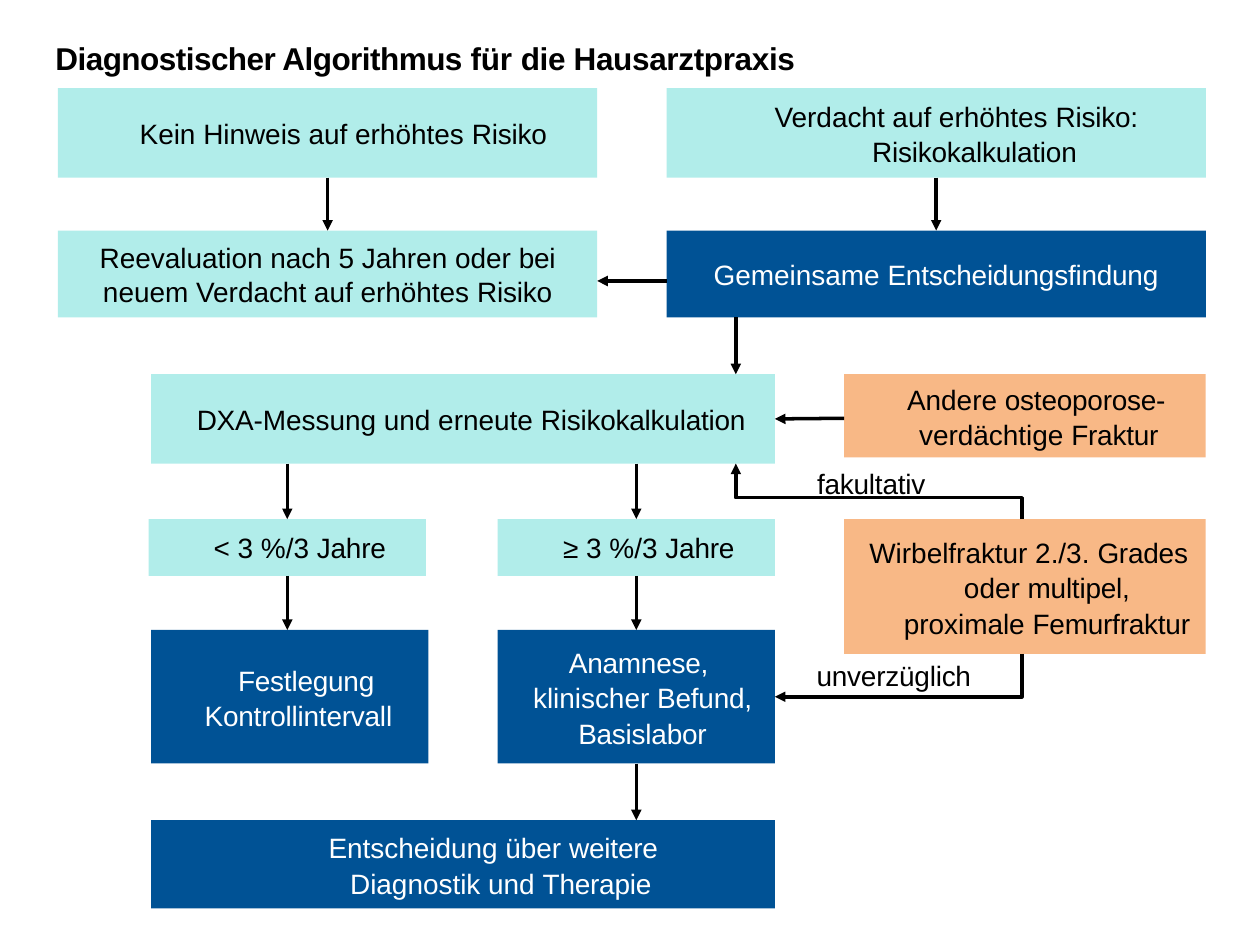
import pptx
import pptx.dml.color
import pptx.enum.shapes
import pptx.enum.text
import pptx.oxml.ns
import pptx.util
from lxml import etree

Inches = pptx.util.Inches
Pt = pptx.util.Pt
PP_ALIGN = pptx.enum.text.PP_ALIGN
MSO_ANCHOR = pptx.enum.text.MSO_ANCHOR
MSO_AUTO_SIZE = pptx.enum.text.MSO_AUTO_SIZE
BLACK, WHITE = "000000", "FFFFFF"
MINT, BLUE, ORANGE = "B1EDEA", "005295", "F8B886"
TOP, LEFT, BOTTOM, RIGHT = range(4)


def rgb(value):
    return pptx.dml.color.RGBColor.from_string(value)


class Flowchart:
    """Draws the boxes, arrows and labels of a flowchart on one slide."""

    font = {"name": "Arial", "size": Pt(16), "bold": False}
    insets = {"margin_left": 0, "margin_top": 0, "margin_right": 0, "margin_bottom": 0}

    def __init__(self, prs):
        self.s = prs.slides.add_slide(prs.slide_layouts[5])

    def apply(self, target, values):
        for name, value in values.items():
            setattr(target, name, value)

    def fill_text(self, sp, runs, color, frame, align=PP_ALIGN.CENTER, indent=(0, 0),
                  spacing=1.0, **font):
        tf = sp.text_frame
        self.apply(tf, {"word_wrap": True, **self.insets, **frame})
        p = tf.paragraphs[0]
        self.apply(p, {"alignment": align, "line_spacing": spacing, "space_before": Pt(0)})
        pPr = p._p.get_or_add_pPr()
        pPr.set("marL", str(Inches(indent[0])))
        pPr.set("indent", str(Inches(indent[1])))
        for text, tracking in runs:
            r = p.add_run()
            r.text = text.rstrip("\n")
            self.apply(r.font, {**self.font, **font})
            r.font.color.rgb = rgb(color)
            r._r.get_or_add_rPr().set("spc", str(round(tracking * 100)))
            if text.endswith("\n"):
                p.add_line_break()

    def title(self, at, runs):
        sp = self.s.shapes.title
        self.apply(sp, dict(zip(("left", "top", "width", "height"), map(Inches, at))))
        frame = {"margin_top": Inches(0.02), "vertical_anchor": MSO_ANCHOR.TOP,
                 "auto_size": MSO_AUTO_SIZE.SHAPE_TO_FIT_TEXT}
        self.fill_text(sp, runs, BLACK, frame, PP_ALIGN.LEFT, (0.01, 0), size=Pt(18), bold=True)

    def box(self, at, fill, runs, indent=(0, 0), spacing=1.0):
        sp = self.s.shapes.add_shape(
            pptx.enum.shapes.MSO_SHAPE.RECTANGLE, *map(Inches, at))
        sp.shadow.inherit = False
        sp.fill.solid()
        sp.fill.fore_color.rgb = rgb(fill)
        sp.line.fill.background()
        self.fill_text(sp, runs, WHITE if fill == BLUE else BLACK,
                       {"vertical_anchor": MSO_ANCHOR.MIDDLE}, indent=indent, spacing=spacing)
        return sp

    def label(self, at, text):
        sp = self.s.shapes.add_textbox(*map(Inches, at))
        frame = {"margin_top": Inches(0.01), "auto_size": MSO_AUTO_SIZE.SHAPE_TO_FIT_TEXT}
        self.fill_text(sp, [(text, -0.1)], BLACK, frame, indent=(0.01, 0))

    def arrowhead(self, sp):
        sp.line.color.rgb = rgb(BLACK)
        sp.line.width = Pt(2)
        ln = sp.line._get_or_add_ln()
        etree.SubElement(ln, pptx.oxml.ns.qn("a:tailEnd"), type="triangle")

    def arrow(self, start, end, begin_at=None, end_at=None):
        sp = self.s.shapes.add_connector(
            pptx.enum.shapes.MSO_CONNECTOR.STRAIGHT, *map(Inches, start + end))
        if begin_at:
            sp.begin_connect(*begin_at)
        if end_at:
            sp.end_connect(*end_at)
        self.arrowhead(sp)
        etree.SubElement(sp._element.spPr, pptx.oxml.ns.qn("a:effectLst"))

    def bent_arrow(self, *points):
        first, *rest = [tuple(map(Inches, point)) for point in points]
        builder = self.s.shapes.build_freeform(*first)
        builder.add_line_segments(rest, close=False)
        sp = builder.convert_to_shape()
        sp.shadow.inherit = False
        sp.fill.background()
        self.arrowhead(sp)


def main():
    prs = pptx.Presentation()
    prs.slide_width, prs.slide_height = Inches(10), Inches(7.5)
    chart = Flowchart(prs)
    chart.title((0.43, 0.29, 8.25, 0.32), [
        ("Diagnostischer Algorithmus ", -0.3), ("für ", -0.1), ("die Hausarztpraxis", -0.2)])

    no_risk = chart.box((0.46, 0.7, 4.28, 0.71), MINT, [
        ("Kein Hinweis auf erhöhtes ", 0), ("Risiko", -0.1)], (0.25, 0))
    suspicion = chart.box((5.29, 0.7, 4.28, 0.71), MINT, [
        ("Verdacht auf erhöhtes ", 0), ("Risiko: Risikokalkulation", -0.1)], (0.61, -0.29), 1.06)
    review = chart.box((0.46, 1.83, 4.28, 0.69), MINT, [
        ("Reevaluation nach 5 Jahren oder ", 0), ("bei\n", -0.2),
        ("neuem Verdacht auf erhöhtes ", 0), ("Risiko", -0.1)])
    decision = chart.box((5.29, 1.83, 4.28, 0.69), BLUE, [
        ("Gemeinsame ", 0), ("Entscheidungsfindung", -0.1)])
    dxa = chart.box((1.2, 2.97, 4.95, 0.71), MINT, [
        ("DXA-", -0.1), ("Messung und erneute ", 0), ("Risikokalkulation", -0.1)], (0.13, 0))
    chart.box((6.7, 2.97, 2.87, 0.66), ORANGE, [
        ("Andere ", 0), ("osteoporose- ", -0.1), ("verdächtige ", 0), ("Fraktur", -0.1)],
        (0.22, -0.04), 1.06)
    low, high = [
        chart.box((left, 4.12, 2.2, 0.45), MINT, [(f"{sign} 3 %/3 ", 0), ("Jahre", -0.1)], (0.2, 0))
        for left, sign in ((1.18, "<"), (3.95, "≥"))]
    chart.box((6.7, 4.12, 2.87, 1.07), ORANGE, [
        ("Wirbelfraktur 2./3. ", 0), ("Grades\n", -0.1), ("oder ", 0), ("multipel,\n", -0.1),
        ("proximale ", 0), ("Femurfraktur", -0.1)], (0.35, -0.29), 1.06)
    chart.box((1.2, 5, 2.2, 1.06), BLUE, [
        ("Festlegung Kontrollintervall", -0.1)], (0.14, 0.12), 1.06)
    history = chart.box((3.95, 5, 2.2, 1.06), BLUE, [
        ("Anamnese, \n", -0.1), ("klinischer ", 0), ("Befund, Basislabor", -0.1)],
        (0.1, 0), 1.06)
    chart.box((1.2, 6.51, 4.95, 0.7), BLUE, [
        ("Entscheidung über ", 0), ("weitere \n", -0.1), ("Diagnostik und ", 0),
        ("Therapie", -0.1)], (0.6, -0.06), 1.06)

    chart.arrow((2.6, 1.41), (2.6, 1.83), (no_risk, BOTTOM), (review, TOP))
    chart.arrow((7.43, 1.41), (7.43, 1.83), (suspicion, BOTTOM), (decision, TOP))
    chart.arrow((5.29, 2.23), (4.74, 2.23))
    chart.arrow((5.84, 2.52), (5.84, 2.97))
    chart.arrow((6.7, 3.32), (6.15, 3.32), end_at=(dxa, RIGHT))
    chart.arrow((2.28, 3.68), (2.28, 4.12), end_at=(low, TOP))
    chart.arrow((5.05, 3.68), (5.05, 4.12), end_at=(high, TOP))
    chart.arrow((2.28, 4.57), (2.28, 5), (low, BOTTOM))
    chart.arrow((5.05, 4.57), (5.05, 5), (high, BOTTOM), (history, TOP))
    chart.arrow((5.05, 6.06), (5.05, 6.51), (history, BOTTOM))
    chart.bent_arrow((8.11, 4.12), (8.11, 3.95), (5.84, 3.95), (5.84, 3.68))
    chart.bent_arrow((8.11, 5.19), (8.11, 5.53), (6.15, 5.53))
    chart.label((6.42, 3.69, 0.98, 0.28), "fakultativ")
    chart.label((6.44, 5.22, 1.3, 0.28), "unverzüglich")
    prs.save("out.pptx")


if __name__ == "__main__":
    main()
